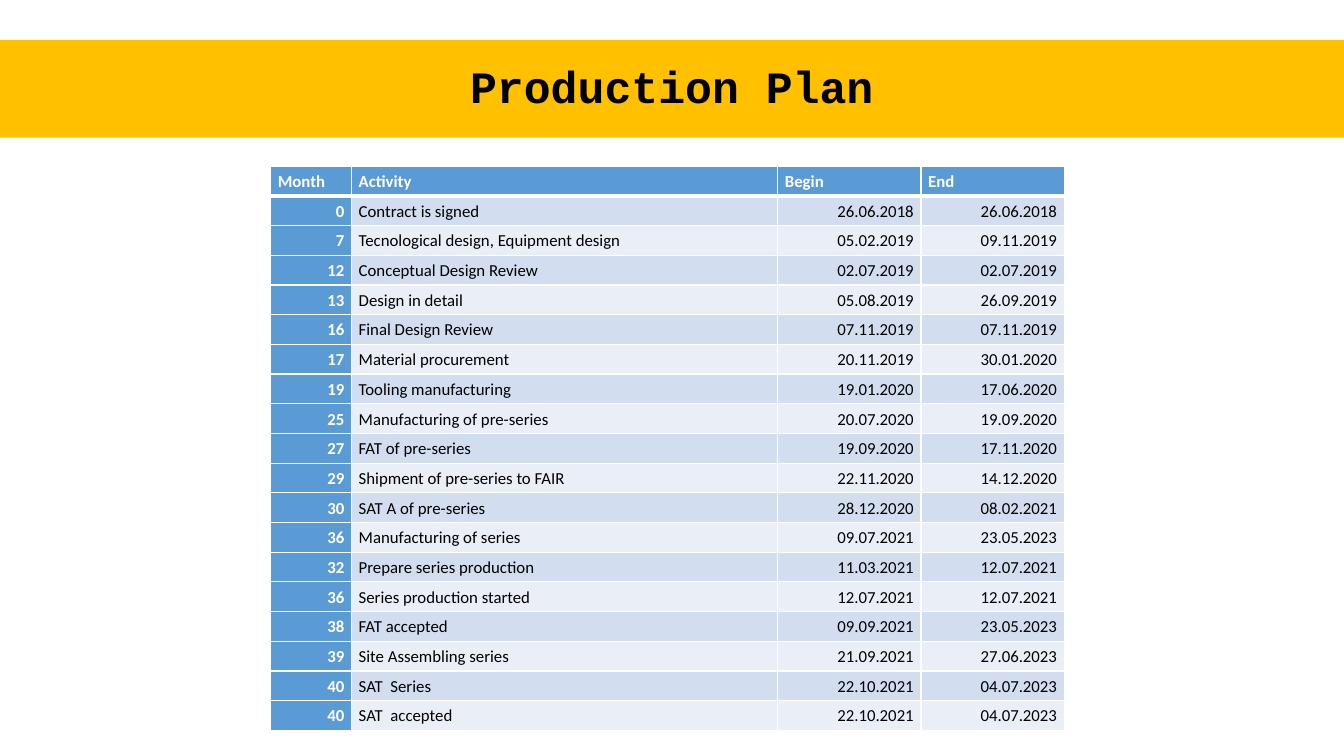
"""Build the Production Plan slide with its schedule table."""

from dataclasses import astuple, dataclass

from lxml.etree import SubElement
from pptx import Presentation
from pptx.dml.color import RGBColor
from pptx.enum.shapes import MSO_SHAPE
from pptx.enum.text import MSO_ANCHOR, PP_ALIGN
from pptx.oxml.ns import qn
from pptx.slide import Slide
from pptx.table import _Cell
from pptx.text.text import _Paragraph
from pptx.util import Cm, Pt

AMBER = RGBColor(0xFF, 0xC0, 0x00)
BLACK = RGBColor(0x00, 0x00, 0x00)
WHITE = RGBColor(0xFF, 0xFF, 0xFF)
BLUE = RGBColor(0x5B, 0x9B, 0xD5)
BAND_DARK = RGBColor(0xD2, 0xDE, 0xEF)
BAND_LIGHT = RGBColor(0xEA, 0xEF, 0xF7)

SLIDE_WIDTH = Cm(33.87)
SLIDE_HEIGHT = Cm(19.05)
TABLE_HEIGHT = Cm(14.22)
COLUMN_WIDTHS = (Cm(2.04), Cm(10.74), Cm(3.61), Cm(3.61))
CELL_MARGIN = Cm(0.18)
THIN_LINE = Pt(1)
HEADER_LINE = Pt(3)
ACTIVITY_COLUMN = 1


@dataclass(frozen=True)
class Stage:
    """One row of the production schedule."""

    month: str
    activity: str
    begin: str
    end: str


HEADER = Stage("Month", "Activity", "Begin", "End")
STAGES = (
    Stage("0", "Contract is signed", "26.06.2018", "26.06.2018"),
    Stage("7", "Tecnological design, Equipment design", "05.02.2019", "09.11.2019"),
    Stage("12", "Conceptual Design Review", "02.07.2019", "02.07.2019"),
    Stage("13", "Design in detail", "05.08.2019", "26.09.2019"),
    Stage("16", "Final Design Review", "07.11.2019", "07.11.2019"),
    Stage("17", "Material procurement", "20.11.2019", "30.01.2020"),
    Stage("19", "Tooling manufacturing", "19.01.2020", "17.06.2020"),
    Stage("25", "Manufacturing of pre-series", "20.07.2020", "19.09.2020"),
    Stage("27", "FAT of pre-series", "19.09.2020", "17.11.2020"),
    Stage("29", "Shipment of pre-series to FAIR", "22.11.2020", "14.12.2020"),
    Stage("30", "SAT A of pre-series", "28.12.2020", "08.02.2021"),
    Stage("36", "Manufacturing of series", "09.07.2021", "23.05.2023"),
    Stage("32", "Prepare series production", "11.03.2021", "12.07.2021"),
    Stage("36", "Series production started", "12.07.2021", "12.07.2021"),
    Stage("38", "FAT accepted", "09.09.2021", "23.05.2023"),
    Stage("39", "Site Assembling series", "21.09.2021", "27.06.2023"),
    Stage("40", "SAT  Series", "22.10.2021", "04.07.2023"),
    Stage("40", "SAT  accepted", "22.10.2021", "04.07.2023"),
)


def format_runs(
    paragraph: _Paragraph, font_name: str, size: int, color: RGBColor, bold: bool
) -> None:
    """Apply one font to all runs of a paragraph."""
    for run in paragraph.runs:
        run.font.name = font_name
        run.font.size = Pt(size)
        run.font.color.rgb = color
        run.font.bold = bold


def add_title(slide: Slide, text: str) -> None:
    """Draw the title band across the slide."""
    band = slide.shapes.add_shape(
        MSO_SHAPE.RECTANGLE, Cm(0), Cm(1.01), SLIDE_WIDTH, Cm(2.46)
    )
    band.shadow.inherit = False
    band.fill.solid()
    band.fill.fore_color.rgb = AMBER
    band.line.fill.background()
    band.text_frame.text = text
    band.text_frame.vertical_anchor = MSO_ANCHOR.MIDDLE
    paragraph = band.text_frame.paragraphs[0]
    paragraph.alignment = PP_ALIGN.CENTER
    paragraph.line_spacing = 0.9
    format_runs(paragraph, "Courier New", 32, BLACK, True)


def set_borders(cell: _Cell, row: int) -> None:
    """Give a cell white borders, thicker between header and body."""
    widths = {
        "a:lnL": THIN_LINE,
        "a:lnR": THIN_LINE,
        "a:lnT": HEADER_LINE if row == 1 else THIN_LINE,
        "a:lnB": HEADER_LINE if row == 0 else THIN_LINE,
    }
    properties = cell._tc.get_or_add_tcPr()
    for tag, width in widths.items():
        line = SubElement(properties, qn(tag), w=str(int(width)))
        fill = SubElement(line, qn("a:solidFill"))
        SubElement(fill, qn("a:srgbClr"), val=str(WHITE))


def fill_cell(cell: _Cell, text: str, row: int, column: int) -> None:
    """Write and format one table cell according to its place."""
    is_heading = row == 0 or column == 0
    is_left = row == 0 or column == ACTIVITY_COLUMN
    band_color = BAND_DARK if row % 2 else BAND_LIGHT
    set_borders(cell, row)
    cell.fill.solid()
    cell.fill.fore_color.rgb = BLUE if is_heading else band_color
    cell.margin_left = cell.margin_right = CELL_MARGIN
    cell.margin_top = cell.margin_bottom = Cm(0)
    cell.vertical_anchor = MSO_ANCHOR.MIDDLE
    cell.text_frame.text = text
    paragraph = cell.text_frame.paragraphs[0]
    paragraph.alignment = PP_ALIGN.LEFT if is_left else PP_ALIGN.RIGHT
    paragraph.line_spacing = 1.07
    format_runs(paragraph, "Calibri", 12, WHITE if is_heading else BLACK, is_heading)


def add_schedule(slide: Slide, stages: tuple[Stage, ...]) -> None:
    """Draw the schedule table."""
    table = slide.shapes.add_table(
        len(stages),
        len(COLUMN_WIDTHS),
        Cm(6.82),
        Cm(4.19),
        sum(COLUMN_WIDTHS),
        TABLE_HEIGHT,
    ).table
    table.first_col = True
    for column, width in zip(table.columns, COLUMN_WIDTHS):
        column.width = width
    for row, stage in enumerate(stages):
        for column, text in enumerate(astuple(stage)):
            fill_cell(table.cell(row, column), text, row, column)


def main() -> None:
    """Create and save the presentation."""
    presentation = Presentation()
    presentation.slide_width = SLIDE_WIDTH
    presentation.slide_height = SLIDE_HEIGHT
    slide = presentation.slides.add_slide(presentation.slide_layouts[6])
    add_title(slide, "Production Plan")
    add_schedule(slide, (HEADER, *STAGES))
    presentation.save("out.pptx")


if __name__ == "__main__":
    main()
